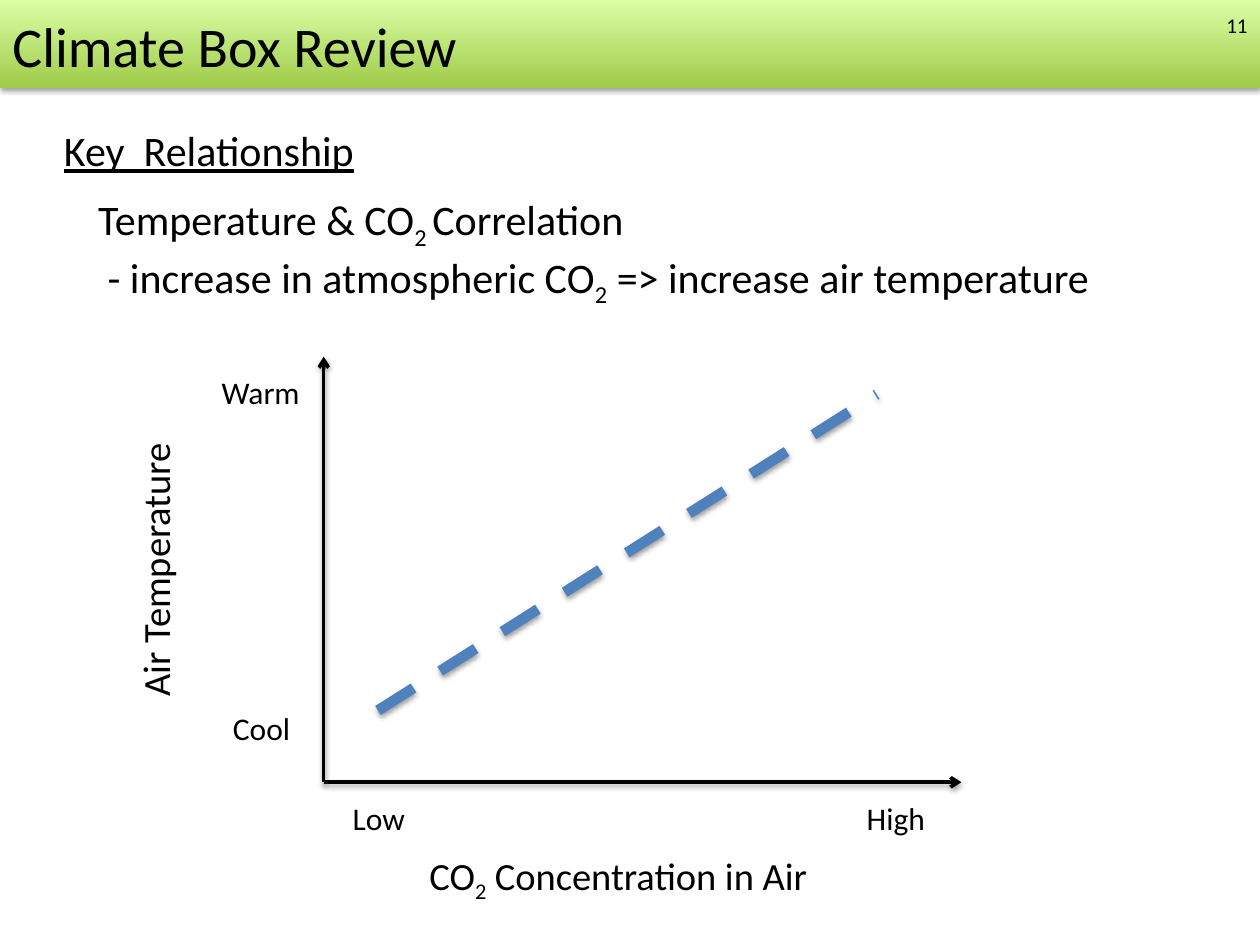
from lxml.etree import SubElement
from pptx import Presentation
from pptx.dml.color import RGBColor
from pptx.enum.dml import MSO_LINE_DASH_STYLE as DASH
from pptx.enum.shapes import MSO_CONNECTOR, MSO_SHAPE
from pptx.enum.text import MSO_ANCHOR, MSO_AUTO_SIZE, PP_ALIGN
from pptx.oxml.ns import qn
from pptx.util import Pt

FONT = "Calibri"
BLACK, BLUE = "000000", "4F81BD"
BANNER_STOPS = [("A0CA4A", 0), ("DAFFA5", 1)]
SLIDE_W, SLIDE_H, BANNER_H = 720, 540, 50.4

# Text between bars is subscript.
TITLE = "Climate Box Review"
PAGE = "11"
HEADING = "Key  Relationship"
RELATIONSHIP = ["Temperature & CO|2 |Correlation",
                "- increase in atmospheric CO|2| => increase air temperature"]
BULLET_INDENT = 5.4

ORIGIN = (185, 447)
X_END, Y_END = 549.4, 203.8
TREND = ((216, 406), (501, 225.4))

LABEL_X, LABEL_Y = 149.8, 467.3
# text, size, centre x, centre y, width, height, rotation
CHART_LABELS = [
    ("Low", 18, 216.7, LABEL_Y, 44.6, 28.8, 0),
    ("High", 18, 512.3, LABEL_Y, 48.2, 28.8, 0),
    ("Cool", 18, LABEL_X, 416.2, 47.5, 28.8, 0),
    ("Warm", 18, LABEL_X, 223.9, 60.5, 28.8, 0),
    ("CO|2| Concentration in Air", 22, 357.8, 500, 239, 33.8, 0),
    ("Air Temperature", 22, 88.6, 322.9, 164.2, 33.8, 270),
]


def rgb(value):
    return RGBColor.from_string(value)


def add_shadow(shape, opacity, distance):
    """Give the shape a soft black shadow straight below it."""
    properties = shape._element.spPr
    for old in properties.findall(qn("a:effectLst")):
        properties.remove(old)
    effects = SubElement(properties, qn("a:effectLst"))
    shadow = SubElement(effects, qn("a:outerShdw"), blurRad=str(Pt(3.1)),
                        dist=str(Pt(distance)), dir="5400000", rotWithShape="0")
    colour = SubElement(shadow, qn("a:srgbClr"), val=BLACK)
    SubElement(colour, qn("a:alpha"), val=str(opacity * 1000))


def add_text(slide, lines, size, left, top, width, height):
    box = slide.shapes.add_textbox(Pt(left), Pt(top), Pt(width), Pt(height))
    frame = box.text_frame
    frame.word_wrap = False
    frame.auto_size = MSO_AUTO_SIZE.SHAPE_TO_FIT_TEXT
    for i, line in enumerate(lines):
        paragraph = frame.paragraphs[0] if i == 0 else frame.add_paragraph()
        paragraph.font.name = FONT
        paragraph.font.size = Pt(size)
        paragraph.font.color.rgb = rgb(BLACK)
        for j, part in enumerate(line.split("|")):
            run = paragraph.add_run()
            run.text = part
            if j % 2:
                run._r.get_or_add_rPr().set("baseline", "-25000")
    return box


def add_line(slide, start, end, colour, width, dash=None, arrow=False):
    points = [Pt(value) for value in (*start, *end)]
    connector = slide.shapes.add_connector(MSO_CONNECTOR.STRAIGHT, *points)
    line = connector.line
    line.color.rgb = rgb(colour)
    line.width = Pt(width)
    if dash:
        line.dash_style = dash
    if arrow:
        SubElement(line._get_or_add_ln(), qn("a:tailEnd"), type="arrow")
    add_shadow(connector, 38, 1.6)


def add_header(slide):
    banner = slide.shapes.add_shape(MSO_SHAPE.RECTANGLE, 0, 0, Pt(SLIDE_W), Pt(BANNER_H))
    banner.line.fill.background()
    banner.fill.gradient()
    banner.fill.gradient_angle = 90
    for stop, (colour, position) in zip(banner.fill.gradient_stops, BANNER_STOPS):
        stop.color.rgb = rgb(colour)
        stop.position = position
    add_shadow(banner, 35, 1.8)

    add_text(slide, [TITLE], 32, 0, 2.9, 272.9, 85)
    number = add_text(slide, [PAGE], 12, 552.2, 0, 167.8, 28.8).text_frame
    number.word_wrap = True
    number.auto_size = MSO_AUTO_SIZE.NONE
    number.vertical_anchor = MSO_ANCHOR.MIDDLE
    number.paragraphs[0].alignment = PP_ALIGN.RIGHT


def add_relationship(slide):
    heading = add_text(slide, [HEADING], 24, 29.5, 73.4, 182.9, 31.7)
    paragraph = heading.text_frame.paragraphs[0]
    paragraph.line_spacing = 0.8
    paragraph.font.underline = True
    for run in paragraph.runs:
        run.font.underline = True

    body = add_text(slide, RELATIONSHIP, 24, 49, 107.3, 583.9, 65.5)
    bullet = body.text_frame.paragraphs[1]
    bullet._p.get_or_add_pPr().set("marL", str(Pt(BULLET_INDENT)))


def add_graph(slide):
    x0, y0 = ORIGIN
    for end in [(X_END, y0), (x0, Y_END)]:
        add_line(slide, ORIGIN, end, BLACK, 2, arrow=True)
    for text, size, x, y, width, height, rotation in CHART_LABELS:
        label = add_text(slide, [text], size, x - width / 2, y - height / 2, width, height)
        label.rotation = rotation
    add_line(slide, *TREND, BLUE, 6, dash=DASH.DASH)


def main():
    deck = Presentation()
    deck.slide_width, deck.slide_height = Pt(SLIDE_W), Pt(SLIDE_H)
    slide = deck.slides.add_slide(deck.slide_layouts[6])
    add_header(slide)
    add_relationship(slide)
    add_graph(slide)
    deck.save("out.pptx")


if __name__ == "__main__":
    main()
